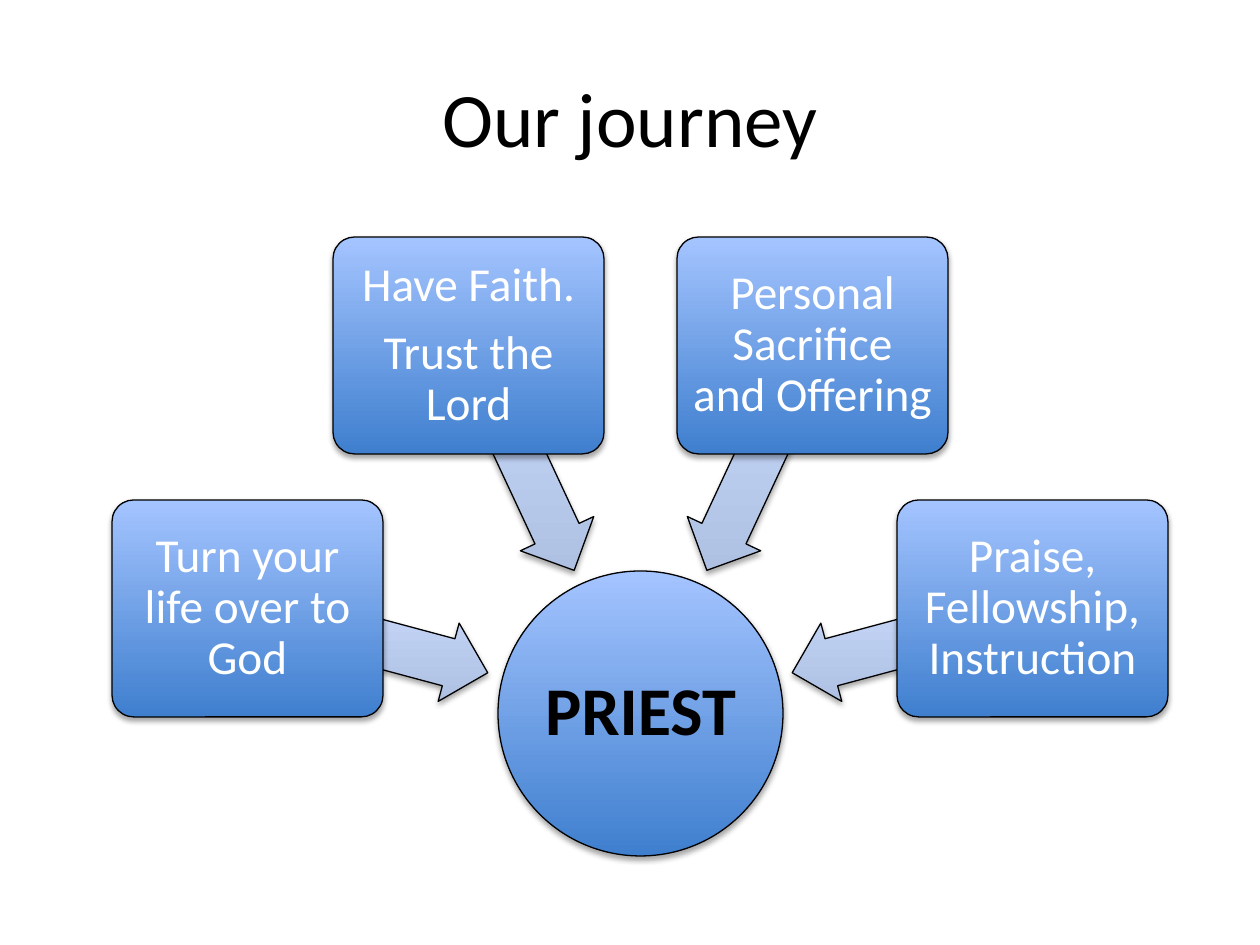
from lxml import etree
from pptx import Presentation
from pptx import util as u
from pptx.dml.color import RGBColor
from pptx.enum import shapes, text
from pptx.oxml.ns import qn

PX = 914400 / 126
BLACK = RGBColor(0x00, 0x00, 0x00)
WHITE = RGBColor(0xFF, 0xFF, 0xFF)
BLUE = (RGBColor(0x3F, 0x7F, 0xCE), RGBColor(0xA4, 0xC4, 0xFF))
PALE = (RGBColor(0xAD, 0xBF, 0xE1), RGBColor(0xCC, 0xDD, 0xFF))


def write(box, words, size, color=WHITE, bold=False, inset=8, spacing=0.9):
    frame = box.text_frame
    frame.word_wrap = True
    frame.vertical_anchor = text.MSO_ANCHOR.MIDDLE
    frame.margin_left = frame.margin_right = round(inset * PX)
    frame.margin_top = frame.margin_bottom = round(inset * PX)
    for i, line in enumerate(words.split("\n")):
        para = frame.add_paragraph() if i else frame.paragraphs[0]
        para.alignment = text.PP_ALIGN.CENTER
        para.line_spacing = spacing
        if i:
            para.space_before = u.Pt(9.5)
        span = para.add_run()
        span.text = line
        span.font.name = "Calibri"
        span.font.size = u.Pt(size)
        span.font.bold = bold
        span.font.color.rgb = color


def add_glossy(kind, left, top, width, height, colors):
    box = page.shapes.add_shape(kind, *(round(n * PX) for n in (left, top, width, height)))
    box.fill.gradient()
    box.fill.gradient_angle = 90
    for stop, color, position in zip(box.fill.gradient_stops, colors, (0, 1)):
        stop.color.rgb = color
        stop.position = position
    properties = box._element.spPr
    properties.find(qn("a:gradFill")).set("rotWithShape", "0")
    box.line.color.rgb = BLACK
    box.line.width = u.Pt(0.75)
    box.shadow.inherit = False
    shadow = etree.SubElement(properties.find(qn("a:effectLst")), qn("a:outerShdw"),
                              blurRad="40000", dist="23000", dir="5400000", rotWithShape="0")
    shade = etree.SubElement(shadow, qn("a:srgbClr"), val="000000")
    etree.SubElement(shade, qn("a:alpha"), val="35000")
    return box


deck = Presentation()
deck.slide_width = round(1260 * PX)
deck.slide_height = round(945 * PX)
page = deck.slides.add_slide(deck.slide_layouts[5])

title = page.shapes.title
title.left, title.top, title.width, title.height = (round(n * PX) for n in (63, 38, 1134, 158))
write(title, "Our journey", size=44, color=BLACK, spacing=1.0)

priest = add_glossy(shapes.MSO_SHAPE.OVAL, 498, 571, 285, 285, BLUE)
write(priest, "PRIEST", size=39, color=BLACK, bold=True, inset=4)

steps = [
    ("Turn your life over to God", 112, 500, 243, 600),
    ("Have Faith.\nTrust the Lord", 333, 237, 397, 417),
    ("Personal Sacrifice and Offering", 677, 237, 635, 417),
    ("Praise, Fellowship, Instruction", 897, 500, 788, 600),
]
for i, (words, left, top, arrow_left, arrow_top) in enumerate(steps):
    arrow = add_glossy(shapes.MSO_SHAPE.LEFT_ARROW, arrow_left, arrow_top, 249, 81, PALE)
    arrow.adjustments[0] = 0.6
    arrow.adjustments[1] = 0.5
    arrow.rotation = 195 + 50 * i
    card = add_glossy(shapes.MSO_SHAPE.ROUNDED_RECTANGLE, left, top, 271, 217, BLUE)
    card.adjustments[0] = 0.1
    write(card, words, size=27)

deck.save("out.pptx")
